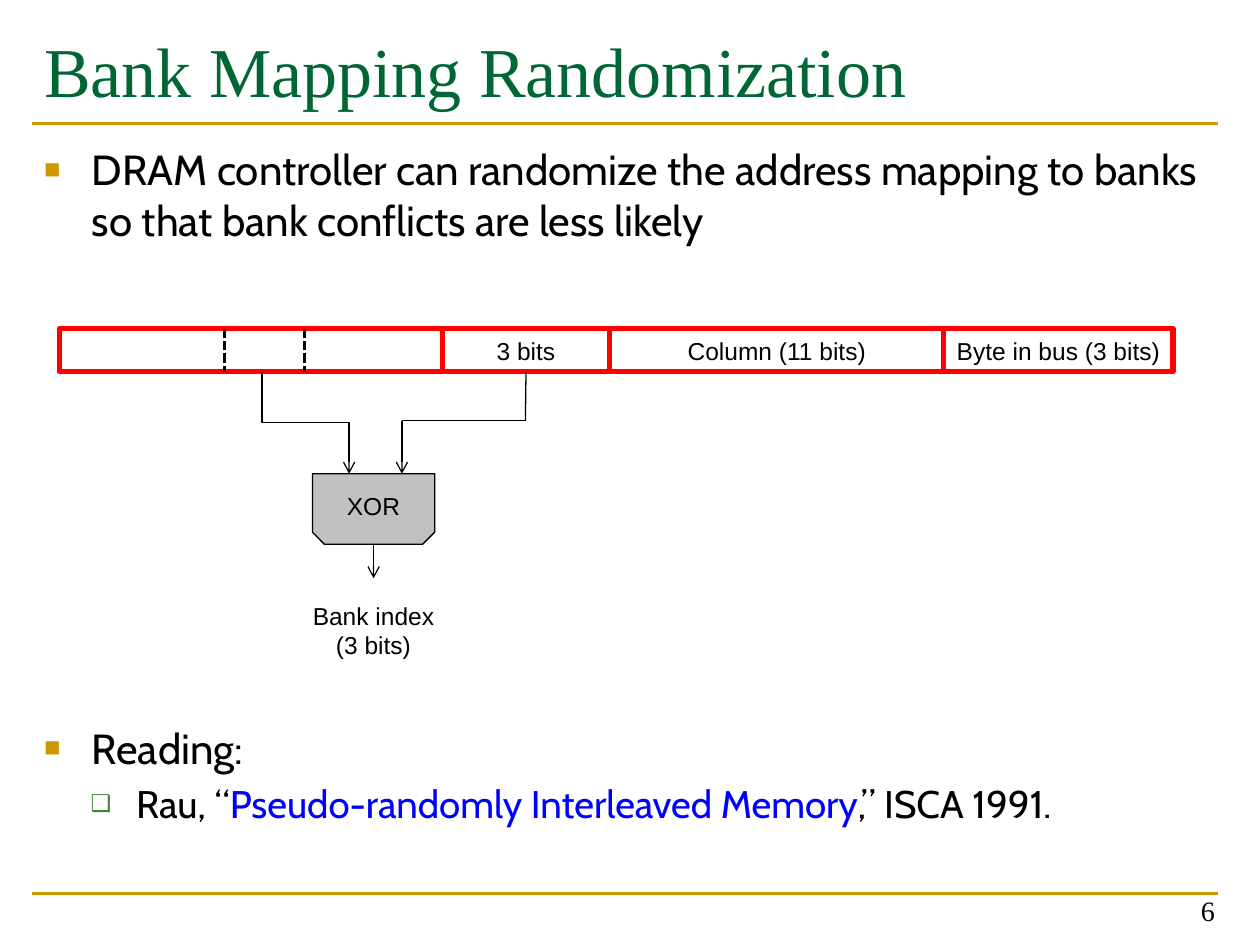
from itertools import pairwise

from lxml.etree import SubElement
from pptx import Presentation
from pptx.dml.color import RGBColor
from pptx.enum.dml import MSO_LINE
from pptx.enum.shapes import MSO_CONNECTOR, MSO_SHAPE
from pptx.enum.text import MSO_ANCHOR, MSO_AUTO_SIZE, PP_ALIGN
from pptx.oxml.ns import qn
from pptx.util import Inches, Pt

COLORS = {
    "title": "006633",
    "gold": "CC9900",
    "green": "3B812F",
    "text": "000000",
    "link": "0000FF",
    "field": "FF0000",
    "gate": "C0C0C0",
}


def color(name):
    return RGBColor.from_string(COLORS[name])


def add_text(paragraph, text, size=14, font="Arial", fill="text", align=None):
    """Append one formatted run to a paragraph."""
    run = paragraph.add_run()
    run.text = text
    run.font.size = Pt(size)
    run.font.name = font
    run.font.color.rgb = color(fill)
    if align is not None:
        paragraph.alignment = align


def place(shape, left, top, width, height):
    shape.left, shape.top = Inches(left), Inches(top)
    shape.width, shape.height = Inches(width), Inches(height)


def set_frame(shape, anchor):
    frame = shape.text_frame
    frame.word_wrap = True
    frame.auto_size = MSO_AUTO_SIZE.NONE
    frame.vertical_anchor = anchor
    return frame


def add_label(slide, box, text, anchor=MSO_ANCHOR.TOP, **text_format):
    label = slide.shapes.add_textbox(*map(Inches, box))
    add_text(set_frame(label, anchor).paragraphs[0], text, **text_format)


def add_box(slide, kind, box, text, line, width, fill=None):
    shape = slide.shapes.add_shape(kind, *map(Inches, box))
    shape.shadow.inherit = False
    shape.line.color.rgb = color(line)
    shape.line.width = Pt(width)
    if fill:
        shape.fill.solid()
        shape.fill.fore_color.rgb = color(fill)
    else:
        shape.fill.background()
    frame = set_frame(shape, MSO_ANCHOR.MIDDLE)
    if text:
        frame.margin_left = frame.margin_right = Inches(0.05)
        add_text(frame.paragraphs[0], text, align=PP_ALIGN.CENTER)
    return shape


def add_line(slide, begin, end, stroke="text", width=0.75, dash=None,
             arrow=False, kind=MSO_CONNECTOR.STRAIGHT):
    line = slide.shapes.add_connector(kind, *map(Inches, begin + end))
    line.line.color.rgb = color(stroke)
    line.line.width = Pt(width)
    if dash:
        line.line.dash_style = dash
    properties = line._element.spPr
    if arrow:
        SubElement(properties.find(qn("a:ln")), qn("a:tailEnd"), type="arrow")
    SubElement(properties, qn("a:effectLst"))
    return line


def add_elbow_down(slide, begin, end):
    """Arrow that leaves downwards, steps right, and arrives downwards."""
    middle_x, middle_y = (begin[0] + end[0]) / 2, (begin[1] + end[1]) / 2
    half_width, half_height = (end[1] - begin[1]) / 2, (end[0] - begin[0]) / 2
    elbow = add_line(slide,
                     (middle_x + half_width, middle_y - half_height),
                     (middle_x - half_width, middle_y + half_height),
                     arrow=True, kind=MSO_CONNECTOR.ELBOW)
    elbow._element.spPr.find(qn("a:xfrm")).set("rot", "16200000")


def set_bullet(paragraph, character, fill, percent, indent, hanging, space_before):
    paragraph.space_before = Pt(space_before)
    properties = paragraph._p.get_or_add_pPr()
    properties.set("marL", str(Inches(indent)))
    properties.set("indent", str(-Inches(hanging)))
    bullet_color = SubElement(properties, qn("a:buClr"))
    SubElement(bullet_color, qn("a:srgbClr"), val=COLORS[fill])
    SubElement(properties, qn("a:buSzPct"), val=str(percent * 1000))
    SubElement(properties, qn("a:buFont"), typeface="Arial")
    SubElement(properties, qn("a:buChar"), char=character)


def add_frame_lines(slide, left, right):
    for y in (0.98, 7.09):
        add_line(slide, (left, y), (right, y), stroke="gold", width=1.5)


def fill_title(slide, box):
    title = slide.shapes.title
    place(title, *box)
    add_text(set_frame(title, MSO_ANCHOR.TOP).paragraphs[0],
             "Bank Mapping Randomization", size=40, font="Times New Roman",
             fill="title", align=PP_ALIGN.LEFT)


def fill_body(slide, box):
    body = slide.placeholders[1]
    place(body, *box)
    frame = set_frame(body, MSO_ANCHOR.TOP)
    square = {"character": "■", "fill": "gold", "percent": 65,
              "indent": 0.38, "hanging": 0.38}

    claim = frame.paragraphs[0]
    set_bullet(claim, space_before=0, **square)
    add_text(claim, "DRAM controller can randomize the address mapping to banks "
             "so that bank conflicts are less likely", size=24, font="Cabin")

    reading = frame.add_paragraph()
    set_bullet(reading, space_before=273, **square)
    add_text(reading, "Reading:", size=24, font="Cabin")

    paper = frame.add_paragraph()
    paper.level = 1
    set_bullet(paper, "❑", "green", 60, 0.73, 0.36, 4.4)
    for text, fill in (("Rau, “", "text"),
                       ("Pseudo-randomly Interleaved Memory", "link"),
                       (",” ISCA 1991.", "text")):
        add_text(paper, text, size=22, font="Cabin", fill=fill)


def add_address_fields(slide, left, top, height):
    """Draw the address word and return the field holding the bank bits."""
    fields = {}
    field_left = left
    for text, width in (("", 3.04), ("3 bits", 1.33), ("Column (11 bits)", 2.65),
                        ("Byte in bus (3 bits)", 1.82)):
        fields[text] = add_box(slide, MSO_SHAPE.RECTANGLE,
                               (field_left, top, width, height), text, "field", 3)
        field_left += width
    for offset in (1.31, 1.95):
        x = left + offset
        add_line(slide, (x, top), (x, top + height), width=1.75,
                 dash=MSO_LINE.SQUARE_DOT)
    return fields["3 bits"]


def add_xor_gate(slide, bank_field, fields_bottom, box):
    left, top, width, height = box
    bottom, center = top + height, left + width / 2
    gate = add_box(slide, MSO_SHAPE.SNIP_2_SAME_RECTANGLE, box, "XOR",
                   "text", 0.75, fill="gate")
    gate.adjustments[0], gate.adjustments[1] = 0, 0.17

    add_elbow_down(slide, (2.08, fields_bottom), (left + 0.29, top))
    bank_x, input_x, bend_y = 4.17, left + 0.71, 3.34
    route = [(bank_x, fields_bottom), (bank_x, bend_y), (input_x, bend_y),
             (input_x, top)]
    segments = [add_line(slide, begin, end, arrow=end == route[-1])
                for begin, end in pairwise(route)]
    segments[0].begin_connect(bank_field, 2)

    add_line(slide, (center, bottom), (center, bottom + 0.27), arrow=True)
    add_label(slide, (center - 0.67, bottom + 0.4, 1.34, 0.57),
              "Bank index (3 bits)", align=PP_ALIGN.CENTER)


def main():
    presentation = Presentation()
    presentation.slide_width, presentation.slide_height = Inches(10), Inches(7.5)
    slide = presentation.slides.add_slide(presentation.slide_layouts[1])
    add_frame_lines(slide, 0.25, 9.67)
    fill_title(slide, (0.25, 0.17, 9.42, 1.17))
    fill_body(slide, (0.25, 1.09, 9.42, 5.68))
    add_label(slide, (7.41, 6.91, 2.33, 0.5), "6", anchor=MSO_ANCHOR.BOTTOM,
              size=16, font="Times New Roman", align=PP_ALIGN.RIGHT)
    bank_field = add_address_fields(slide, 0.47, 2.61, 0.34)
    add_xor_gate(slide, bank_field, 2.95, (2.48, 3.76, 0.97, 0.56))
    presentation.save("out.pptx")


if __name__ == "__main__":
    main()
